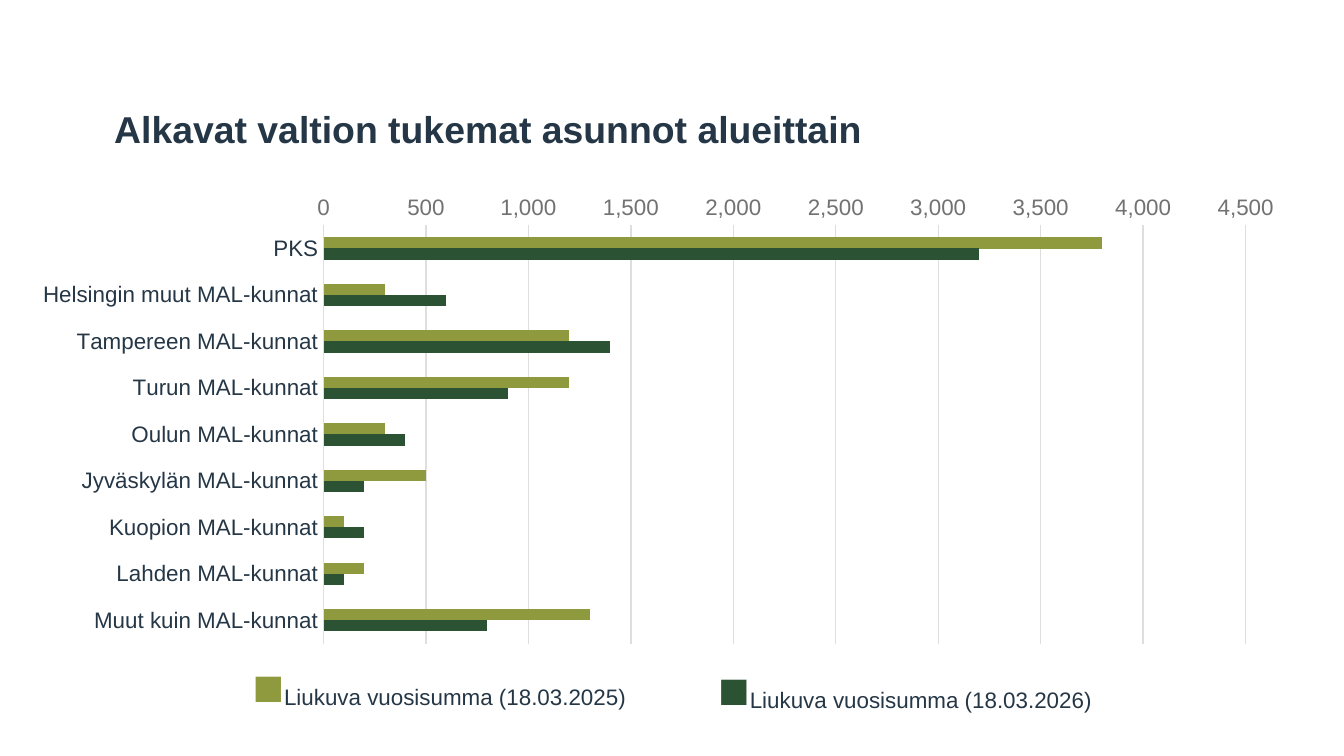
from lxml.etree import SubElement
from pptx import Presentation
from pptx.chart.data import CategoryChartData
from pptx.dml.color import RGBColor
from pptx.enum.chart import XL_CHART_TYPE as ChartType, XL_TICK_MARK as TickMark
from pptx.enum.text import MSO_ANCHOR as Anchor, PP_ALIGN as Align
from pptx.oxml.ns import qn
from pptx.util import Inches, Pt

NAVY = RGBColor(0x25, 0x37, 0x46)
GRAY = RGBColor(0x72, 0x72, 0x72)
CHART_TEXT = RGBColor(0x26, 0x26, 0x26)
GRID = RGBColor(0xDE, 0xDE, 0xDE)
OLIVE = RGBColor(0x8F, 0x99, 0x3E)
FOREST = RGBColor(0x2C, 0x52, 0x34)

WIDTH = Inches(10)
HEIGHT = WIDTH * 9 // 16
FONT = "Arial"

REGIONS = [
    "PKS", "Helsingin muut MAL-kunnat", "Tampereen MAL-kunnat",
    "Turun MAL-kunnat", "Oulun MAL-kunnat", "Jyväskylän MAL-kunnat",
    "Kuopion MAL-kunnat", "Lahden MAL-kunnat", "Muut kuin MAL-kunnat",
]
SERIES = [
    ("Series 1", OLIVE, [3800, 300, 1200, 1200, 300, 500, 100, 200, 1300]),
    ("Series 2", FOREST, [3200, 600, 1400, 900, 400, 200, 200, 100, 800]),
]
LEGEND = [
    ("Liukuva vuosisumma (18.03.2025)", OLIVE, (1.46, 4.86, 3.62, 0.47)),
    ("Liukuva vuosisumma (18.03.2026)", FOREST, (5.24, 4.88, 2.99, 0.47)),
]


def style_font(font, size, color, name=FONT, bold=False):
    font.size, font.name, font.bold = Pt(size), name, bold
    font.color.rgb = color


def style_line(line, color):
    line.color.rgb = color
    line.width = Pt(0.75)


def add_title(page, text):
    title = page.shapes.title
    title.left, title.top = Inches(0.75), Inches(0.77)
    title.width, title.height = Inches(9.17), Inches(0.38)
    frame = title.text_frame
    frame.text = text
    frame.vertical_anchor = Anchor.MIDDLE
    para = frame.paragraphs[0]
    para.alignment = Align.LEFT
    style_font(para.runs[0].font, 20, NAVY, bold=True)


def set_plot_area(chart, x, y, w, h):
    """Fix the inner plot area, in shares of the chart's size."""
    plot_area = chart.plots[0]._element.getparent()
    for old in plot_area.findall(qn("c:layout")):
        plot_area.remove(old)
    layout = SubElement(plot_area, qn("c:layout"))
    plot_area.insert(0, layout)
    manual = SubElement(layout, qn("c:manualLayout"))
    settings = [("layoutTarget", "inner"), ("xMode", "edge"), ("yMode", "edge"),
                ("x", x), ("y", y), ("w", w), ("h", h)]
    for tag, value in settings:
        SubElement(manual, qn(f"c:{tag}")).set("val", str(value))


def style_axis(axis, color):
    axis.major_tick_mark = axis.minor_tick_mark = TickMark.NONE
    style_font(axis.tick_labels.font, 12, color)


def add_region_chart(page):
    data = CategoryChartData(number_format="#,##0")
    data.categories = REGIONS
    for name, _, values in SERIES:
        data.add_series(name, values)
    chart = page.shapes.add_chart(
        ChartType.BAR_CLUSTERED, Inches(0.12), Inches(1.4),
        Inches(9.53), Inches(3.46), data).chart
    chart.has_legend = chart.has_title = False
    style_font(chart.font, 10, CHART_TEXT, "DejaVu Sans")

    plot = chart.plots[0]
    plot.vary_by_categories = False
    plot.gap_width, plot.overlap = 219, 1
    for series, (_, color, _) in zip(plot.series, SERIES):
        series.format.fill.solid()
        series.format.fill.fore_color.rgb = color
    set_plot_area(chart, 0.24, 0.08, 0.72, 0.9)

    regions = chart.category_axis
    style_axis(regions, NAVY)
    regions.reverse_order = True
    style_line(regions.format.line, GRID)

    homes = chart.value_axis
    style_axis(homes, GRAY)
    homes.minimum_scale, homes.maximum_scale, homes.major_unit = 0, 4500, 500
    homes.tick_labels.number_format = "#,##0"
    homes.tick_labels.number_format_is_linked = False
    homes.format.line.fill.background()
    homes.has_major_gridlines = True
    style_line(homes.major_gridlines.format.line, GRID)


def add_legend_entry(page, label, color, place):
    box = page.shapes.add_textbox(*(Inches(length) for length in place))
    frame = box.text_frame
    frame.word_wrap = True
    frame.vertical_anchor = Anchor.MIDDLE
    para = frame.paragraphs[0]
    para.alignment = Align.CENTER
    for text, size, ink in [("■", 28, color), (label, 12, NAVY)]:
        span = para.add_run()
        span.text = text
        style_font(span.font, size, ink)


def main():
    deck = Presentation()
    deck.slide_width, deck.slide_height = WIDTH, HEIGHT
    page = deck.slides.add_slide(deck.slide_layouts[5])
    add_title(page, "Alkavat valtion tukemat asunnot alueittain")
    add_region_chart(page)
    for entry in LEGEND:
        add_legend_entry(page, *entry)
    deck.save("out.pptx")


if __name__ == "__main__":
    main()
